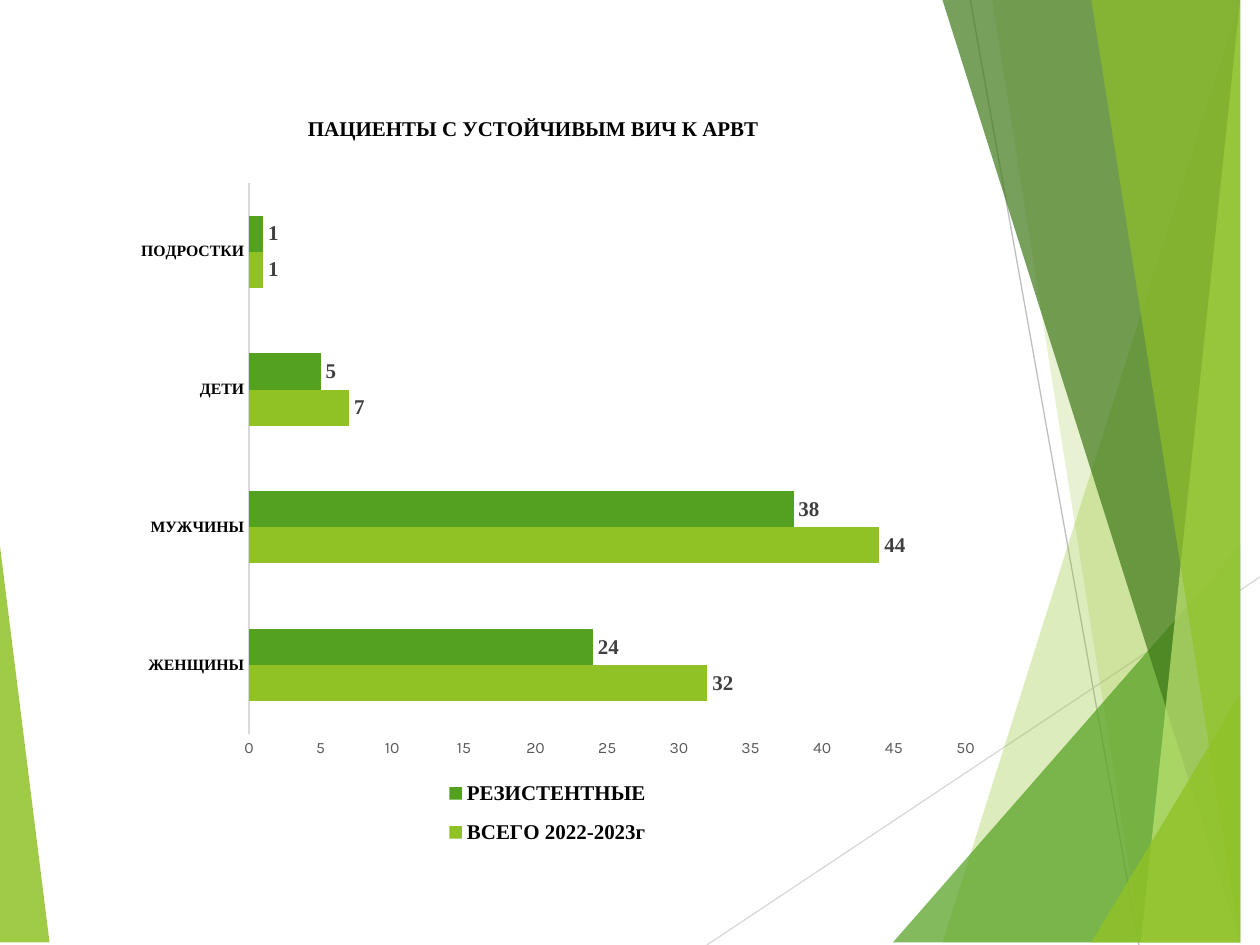
from lxml import etree
from pptx import Presentation
from pptx.chart.data import CategoryChartData
from pptx.dml.color import RGBColor
from pptx.enum.chart import (
    XL_CHART_TYPE as ChartType,
    XL_LABEL_POSITION as LabelPosition,
    XL_LEGEND_POSITION as LegendPosition,
    XL_TICK_MARK as TickMark,
)
from pptx.oxml.ns import qn
from pptx.util import Cm, Pt

LIME = RGBColor(0x90, 0xC2, 0x26)
GREEN = RGBColor(0x54, 0xA0, 0x21)
DARK_GREEN = RGBColor(0x3F, 0x78, 0x19)
PALE_LIME = RGBColor(0xC0, 0xE4, 0x74)
LIGHT_GRAY = RGBColor(0xD9, 0xD9, 0xD9)
GRAY = RGBColor(0xBF, 0xBF, 0xBF)
DARK_GRAY = RGBColor(0x40, 0x40, 0x40)
AXIS_GRAY = RGBColor(0x59, 0x59, 0x59)
BLACK = RGBColor(0, 0, 0)

SERIF, SANS = "Times New Roman", "Karla"
WIDTH, HEIGHT = 25.4, 19.05

# Colour, opacity in percent, corners in cm
FACETS = [
    (LIME, 85, [(0, 11.3), (1.24, HEIGHT), (0, HEIGHT)]),
    (LIME, 30, [(24.77, 0), (19.15, HEIGHT), (WIDTH, HEIGHT), (WIDTH, 0)]),
    (LIME, 20, [(20.02, 0), (23.34, HEIGHT), (WIDTH, HEIGHT), (WIDTH, 0)]),
    (GREEN, 72, [(18.44, HEIGHT), (WIDTH, 10.9), (WIDTH, HEIGHT)]),
    (DARK_GREEN, 70, [(19.48, 0), (24.64, HEIGHT), (WIDTH, HEIGHT), (WIDTH, 0)]),
    (PALE_LIME, 70, [(24.92, 0), (23.04, HEIGHT), (WIDTH, HEIGHT), (WIDTH, 0)]),
    (LIME, 65, [(22.43, 0), (25.04, HEIGHT), (WIDTH, HEIGHT), (25.35, 0)]),
    (LIME, 80, [(22.38, HEIGHT), (WIDTH, 13.59), (WIDTH, HEIGHT)]),
]
RAYS = [
    (LIGHT_GRAY, (14.25, HEIGHT), (WIDTH, 11.63)),
    (GRAY, (19.56, 0), (22.96, HEIGHT)),
]

CATEGORIES = ["ЖЕНЩИНЫ", "МУЖЧИНЫ", "ДЕТИ", "ПОДРОСТКИ"]
SERIES = [
    ("ВСЕГО 2022-2023г", (32, 44, 7, 1), LIME),
    ("РЕЗИСТЕНТНЫЕ", (24, 38, 5, 1), GREEN),
]


def apply_format(target, **values):
    for name, value in values.items():
        setattr(target, name, value)


def format_font(font, size, color, name=SERIF, bold=True):
    apply_format(font, size=Pt(size), name=name, bold=bold)
    font.color.rgb = color


def add_facet(slide, left, top, color, opacity, corners):
    points = [(left + x, top + y) for x, y in corners]
    builder = slide.shapes.build_freeform(*points[0], scale=Cm(1))
    builder.add_line_segments(points[1:], close=True)
    shape = builder.convert_to_shape()
    shape.shadow.inherit = False
    shape.line.fill.background()
    shape.fill.solid()
    shape.fill.fore_color.rgb = color
    color_element = shape.fill._xPr.find(".//" + qn("a:srgbClr"))
    etree.SubElement(color_element, qn("a:alpha"), val=str(opacity * 1000))


def add_ray(slide, left, top, color, start, end):
    ends = [Cm(offset + value) for point in (start, end)
            for offset, value in zip((left, top), point)]
    connector = slide.shapes.add_connector(1, *ends)
    connector.line.color.rgb = color
    connector.line.width = Pt(0.75)
    etree.SubElement(connector._element.spPr, qn("a:effectLst"))


def add_backdrop(slide, left, top):
    """Faceted green decoration; the left facet lies behind the rays."""
    add_facet(slide, left, top, *FACETS[0])
    for ray in RAYS:
        add_ray(slide, left, top, *ray)
    for facet in FACETS[1:]:
        add_facet(slide, left, top, *facet)


def set_layout(element, inner=False, **fractions):
    """Place a chart part by fractions of the chart area."""
    for old in element.findall(qn("c:layout")):
        element.remove(old)
    layout = etree.Element(qn("c:layout"))
    manual = etree.SubElement(layout, qn("c:manualLayout"))
    if inner:
        etree.SubElement(manual, qn("c:layoutTarget"), val="inner")
    for mode in ("xMode", "yMode"):
        etree.SubElement(manual, qn("c:" + mode), val="edge")
    for name, value in fractions.items():
        etree.SubElement(manual, qn("c:" + name), val=str(value))
    overlay = element.find(qn("c:overlay"))
    if overlay is None:
        element.insert(0, layout)
    else:
        overlay.addprevious(layout)


def format_axes(chart):
    category, value = chart.category_axis, chart.value_axis
    for axis in (category, value):
        apply_format(axis, major_tick_mark=TickMark.NONE,
                     minor_tick_mark=TickMark.NONE, has_major_gridlines=False)
    format_font(category.tick_labels.font, 9, BLACK)
    category.format.line.color.rgb = LIGHT_GRAY
    category.format.line.width = Pt(0.75)
    apply_format(value, minimum_scale=0, maximum_scale=50, major_unit=5)
    format_font(value.tick_labels.font, 9, AXIS_GRAY, SANS, False)
    value.format.line.fill.background()


def format_series(plot):
    apply_format(plot, gap_width=182, overlap=0, vary_by_categories=False)
    for series, (_, _, color) in zip(plot.series, SERIES):
        series.format.fill.solid()
        series.format.fill.fore_color.rgb = color
        labels = series.data_labels
        apply_format(labels, show_value=True, position=LabelPosition.OUTSIDE_END)
        format_font(labels.font, 12, DARK_GRAY)


def add_patient_chart(slide, left, top, width, height):
    data = CategoryChartData()
    data.categories = CATEGORIES
    for name, values, _ in SERIES:
        data.add_series(name, values)
    chart = slide.shapes.add_chart(
        ChartType.BAR_CLUSTERED, Cm(left), Cm(top), Cm(width), Cm(height), data
    ).chart
    format_font(chart.font, 10, BLACK, SANS, False)

    # Title
    chart.has_title = True
    title = chart.chart_title
    title.text_frame.text = "ПАЦИЕНТЫ С УСТОЙЧИВЫМ ВИЧ К АРВТ"
    format_font(title.text_frame.paragraphs[0].runs[0].font, 12, BLACK)
    set_layout(title._element, x=0.25, y=0.03)

    # Legend
    chart.has_legend = True
    legend = chart.legend
    apply_format(legend, position=LegendPosition.BOTTOM, include_in_layout=False)
    format_font(legend.font, 12, BLACK)
    set_layout(legend._element, x=0.37, y=0.86, w=0.29, h=0.12)

    # Plot
    set_layout(chart._chartSpace.chart.plotArea, inner=True,
               x=0.19, y=0.12, w=0.78, h=0.7)
    format_axes(chart)
    format_series(chart.plots[0])


def main():
    presentation = Presentation()
    presentation.slide_width = Cm(WIDTH)
    presentation.slide_height = Cm(HEIGHT)
    slide = presentation.slides.add_slide(presentation.slide_layouts[6])
    add_backdrop(slide, 0, 0)
    add_patient_chart(slide, 1.5, 1.78, 18.52, 15.88)
    presentation.save("out.pptx")


if __name__ == "__main__":
    main()
